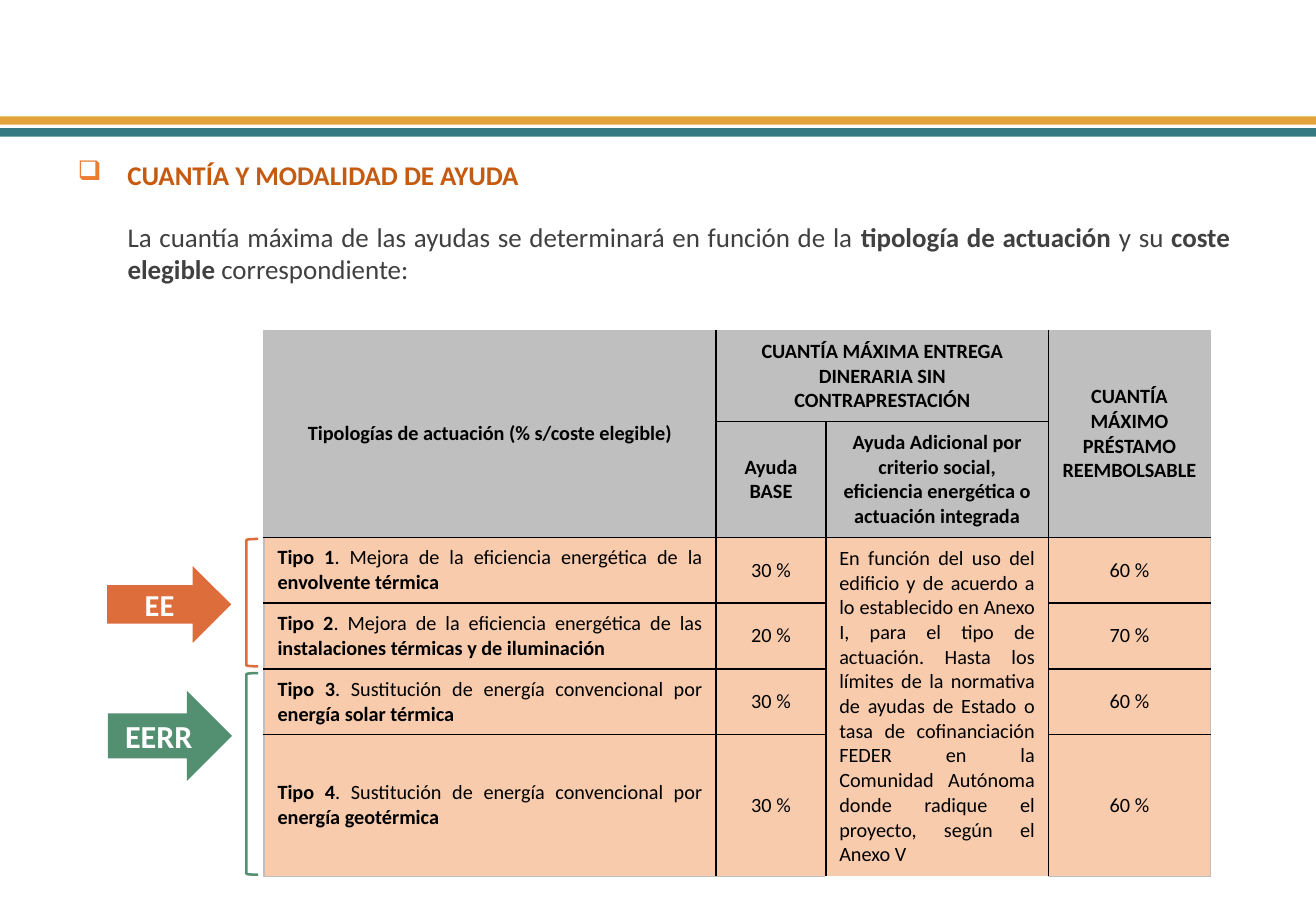
import pptx
import pptx.dml.color
import pptx.enum.shapes
import pptx.enum.text
import pptx.oxml
import pptx.oxml.ns
import pptx.util

Pt = pptx.util.Pt
SHAPES = pptx.enum.shapes.MSO_SHAPE
ALIGN = pptx.enum.text.PP_ALIGN
MIDDLE = pptx.enum.text.MSO_ANCHOR.MIDDLE
NO_AUTOSIZE = pptx.enum.text.MSO_AUTO_SIZE.NONE

GOLD, TEAL = "E4A33A", "357983"
ORANGE, GREEN = "DD6D3B", "539071"
GREY, PEACH = "BFBFBF", "F8CBAD"
BLACK, WHITE = "000000", "FFFFFF"


def color(hex_value):
    return pptx.dml.color.RGBColor.from_string(hex_value)


def drawing_xml(tag, body="", **attributes):
    listed = " ".join(f'{key}="{value}"' for key, value in attributes.items())
    return pptx.oxml.parse_xml(
        f'<a:{tag} {pptx.oxml.ns.nsdecls("a")} {listed}>{body}</a:{tag}>')


def write(frame, text, size=12, ink=BLACK, align=ALIGN.CENTER, anchor=MIDDLE,
          insets=(8.5, 4.25), indent=0, hanging=0, bullet=None, bullet_ink=None):
    """Fill a text frame or cell; pieces between ** marks are bold."""
    frame.margin_left = frame.margin_right = Pt(insets[0])
    frame.margin_top = frame.margin_bottom = Pt(insets[1])
    frame.vertical_anchor = anchor
    frame.word_wrap = True
    paragraph = getattr(frame, "text_frame", frame).paragraphs[0]
    paragraph.alignment = align
    paragraph.space_before = Pt(0)
    properties = paragraph._p.get_or_add_pPr()
    properties.set("marL", str(Pt(indent)))
    properties.set("indent", str(Pt(-hanging)))
    if bullet:
        properties.append(drawing_xml("buClr", f'<a:srgbClr val="{bullet_ink}"/>'))
        properties.append(drawing_xml("buChar", char=bullet))
    for position, piece in enumerate(text.split("**")):
        if piece:
            run = paragraph.add_run()
            run.text = piece
            run.font.name = "Calibri"
            run.font.size = Pt(size)
            run.font.bold = position % 2 == 1
            run.font.color.rgb = color(ink)


class SlideBuilder:
    def __init__(self, deck):
        self.slide = deck.slides.add_slide(deck.slide_layouts[5])
        self.shapes = self.slide.shapes

    def title(self, text, left, top, width, height, **style):
        heading = self.shapes.title
        heading.left, heading.top = Pt(left), Pt(top)
        heading.width, heading.height = Pt(width), Pt(height)
        heading.text_frame.auto_size = NO_AUTOSIZE
        write(heading.text_frame, text, **style)

    def textbox(self, text, left, top, width, height, **style):
        box = self.shapes.add_textbox(Pt(left), Pt(top), Pt(width), Pt(height))
        write(box.text_frame, text, **style)

    def shape(self, kind, left, top, width, height, fill=None, line=None):
        figure = self.shapes.add_shape(kind, Pt(left), Pt(top), Pt(width), Pt(height))
        figure.shadow.inherit = False
        if fill:
            figure.fill.solid()
            figure.fill.fore_color.rgb = color(fill)
        else:
            figure.fill.background()
        if line:
            figure.line.color.rgb = color(line)
            figure.line.width = Pt(1.5)
        else:
            figure.line.fill.background()
        return figure

    def table(self, left, top, columns, rows, merges, texts, header_rows):
        grid = self.shapes.add_table(len(rows), len(columns), Pt(left), Pt(top),
                                     Pt(sum(columns)), Pt(sum(rows))).table
        grid.first_row = grid.horz_banding = False
        for column, width in zip(grid.columns, columns):
            column.width = Pt(width)
        for row, height in zip(grid.rows, rows):
            row.height = Pt(height)

        # Each cell belongs to an area: first row, first column, last row, last column
        areas = {(r, c): (r, c, r, c)
                 for r in range(len(rows)) for c in range(len(columns))}
        for r0, c0, r1, c1 in merges:
            grid.cell(r0, c0).merge(grid.cell(r1, c1))
            for r in range(r0, r1 + 1):
                for c in range(c0, c1 + 1):
                    areas[r, c] = (r0, c0, r1, c1)

        for (r, c), area in areas.items():
            cell = grid.cell(r, c)
            self.borders(cell, r, c, area, len(rows) - 1, len(columns) - 1)
            cell.fill.solid()
            cell.fill.fore_color.rgb = color(GREY if r < header_rows else PEACH)
            if (r, c) in texts:
                justified = r >= header_rows and c in (0, 2)
                write(cell, texts[r, c], insets=(8, 5),
                      align=ALIGN.JUSTIFY if justified else ALIGN.CENTER)

    def borders(self, cell, r, c, area, last_row, last_column):
        properties = cell._tc.get_or_add_tcPr()
        r0, c0, r1, c1 = area
        # Side, lies on the rim of its area, lies on the rim of the table
        sides = (("lnL", c == c0, c == 0), ("lnR", c == c1, c == last_column),
                 ("lnT", r == r0, r == 0), ("lnB", r == r1, r == last_row))
        for tag, on_rim, outer in sides:
            if on_rim:
                ink = GREY if outer else BLACK
                properties.append(drawing_xml(
                    tag, f'<a:solidFill><a:srgbClr val="{ink}"/></a:solidFill>',
                    w=Pt(1)))


def main():
    deck = pptx.Presentation()
    deck.slide_width, deck.slide_height = Pt(780), Pt(540)
    page = SlideBuilder(deck)

    # Header bands
    for top, fill in ((69, GOLD), (76, TEAL)):
        page.shape(SHAPES.RECTANGLE, 0, top, 780, 5, fill=fill)

    # Heading and introduction
    page.title("**CUANTÍA Y MODALIDAD DE AYUDA**", 37.5, 89.5, 692, 28, size=16,
               ink="C55A11", align=ALIGN.JUSTIFY, indent=29.5, hanging=29.5,
               bullet="❑", bullet_ink="ED7D31")
    page.textbox("La cuantía máxima de las ayudas se determinará en función de la "
                 "**tipología de actuación **y su **coste elegible **correspondiente:",
                 32.5, 127, 703.5, 46, size=16, ink="404040", align=ALIGN.JUSTIFY,
                 anchor=pptx.enum.text.MSO_ANCHOR.TOP, insets=(7.2, 3.6), indent=36)

    # Aid table
    texts = {
        (0, 0): "**Tipologías de actuación (% s/coste elegible)**",
        (0, 1): "**CUANTÍA MÁXIMA ENTREGA DINERARIA SIN CONTRAPRESTACIÓN**",
        (0, 3): "**CUANTÍA MÁXIMO PRÉSTAMO REEMBOLSABLE**",
        (1, 1): "**Ayuda BASE**",
        (1, 2): "**Ayuda Adicional por criterio social, eficiencia energética "
                "o actuación integrada**",
        (2, 2): "En función del uso del edificio y de acuerdo a lo establecido en "
                "Anexo I, para el tipo de actuación. Hasta los límites de la "
                "normativa de ayudas de Estado o tasa de cofinanciación FEDER en la "
                "Comunidad Autónoma donde radique el proyecto, según el Anexo V",
    }
    efficiency = "Mejora de la eficiencia energética de"
    renewable = "Sustitución de energía convencional por"
    aid_types = (
        (f"{efficiency} la", "envolvente térmica", 30, 60),
        (f"{efficiency} las", "instalaciones térmicas y de iluminación", 20, 70),
        (renewable, "energía solar térmica", 30, 60),
        (renewable, "energía geotérmica", 30, 60),
    )
    for number, (action, target, base, loan) in enumerate(aid_types, start=1):
        row = number + 1
        texts[row, 0] = f"**Tipo {number}**. {action} **{target}**"
        texts[row, 1] = f"{base} %"
        texts[row, 3] = f"{loan} %"
    page.table(156.5, 196, columns=(268, 65, 132, 96),
               rows=(54, 68.5, 39, 39, 39, 84),
               merges=((0, 0, 1, 0), (0, 1, 0, 2), (0, 3, 1, 3), (2, 2, 5, 2)),
               texts=texts, header_rows=2)

    # Group arrows and brackets
    groups = (("EE", ORANGE, 18, (63.5, 335.5, 73.5, 45.5), (319.5, 75.5)),
              ("EERR", GREEN, 19, (64, 409.5, 73.5, 53.5), (399, 119.5)))
    for label, tint, size, arrow_box, (bracket_top, bracket_height) in groups:
        arrow = page.shape(SHAPES.RIGHT_ARROW, *arrow_box, fill=tint)
        write(arrow.text_frame, f"**{label}**", size=size, ink=WHITE)
        page.shape(SHAPES.LEFT_BRACKET, 146, bracket_top, 7, bracket_height, line=tint)

    deck.save("out.pptx")


if __name__ == "__main__":
    main()
